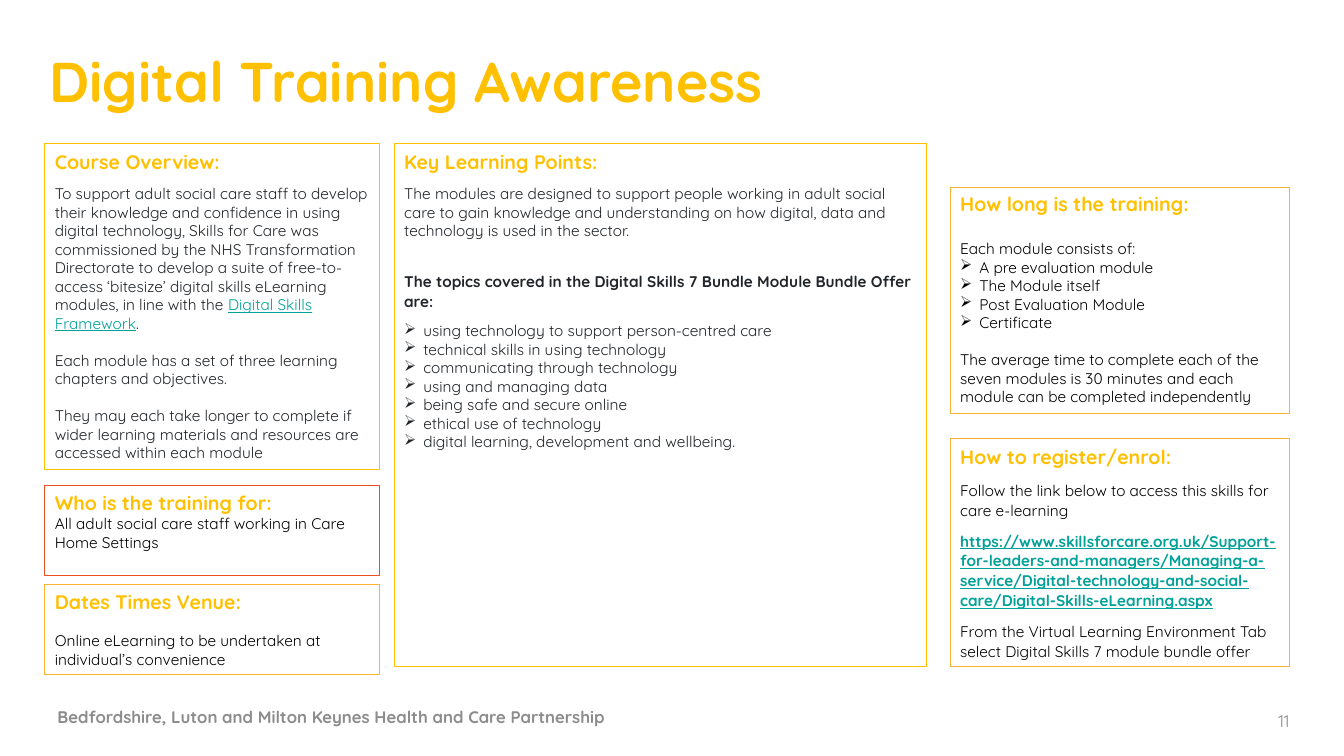
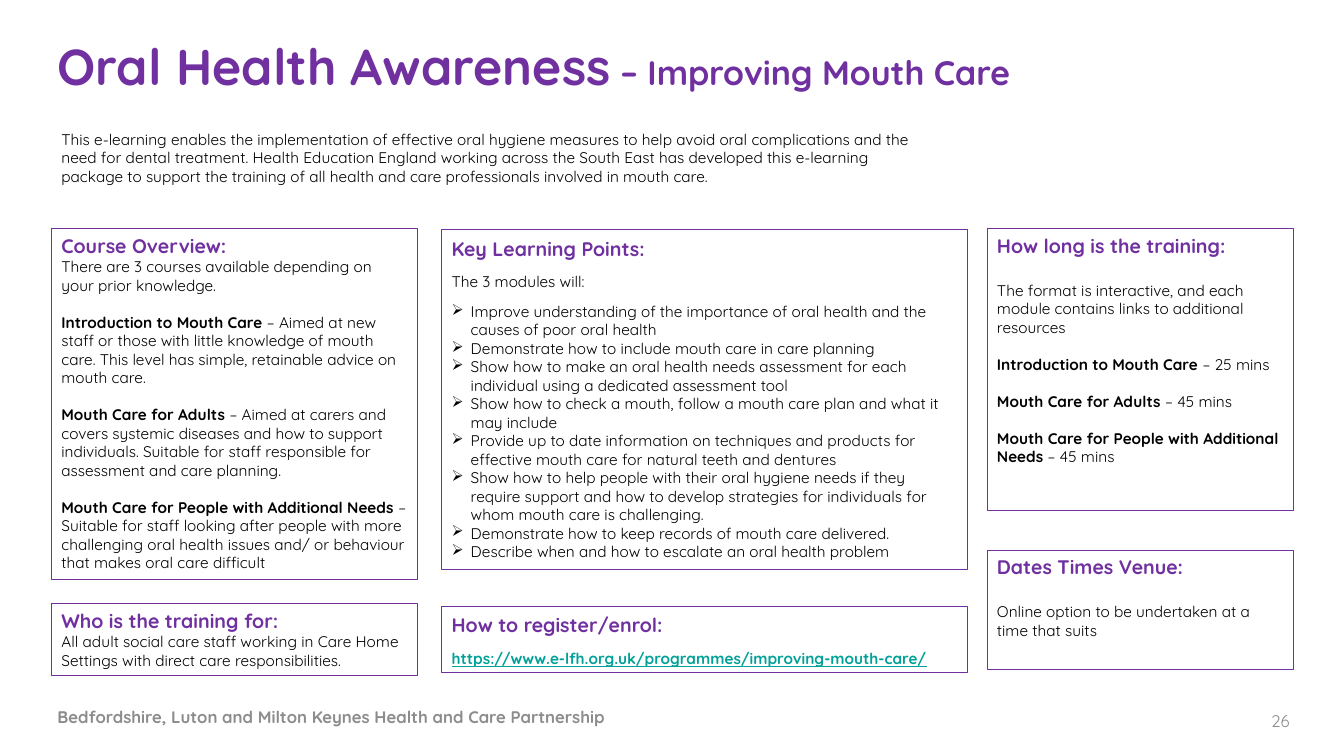
"""Builds two training course slides made of outlined information boxes."""
from dataclasses import dataclass, field
from typing import NamedTuple

from lxml import etree
from pptx import Presentation
from pptx import util as u
from pptx.dml.color import RGBColor
from pptx.enum import shapes, text
from pptx.oxml.ns import qn


@dataclass(frozen=True)
class Theme:
    font: str = "Quicksand"
    yellow: str = "FFC000"
    amber: str = "F9B334"
    red: str = "E8501D"
    purple: str = "7030A0"
    black: str = "000000"
    charcoal: str = "212529"
    teal: str = "00A198"
    grey: str = "8C8C8C"
    heading: float = 14
    body: float = 11
    footer: float = 12
    outline: float = 0.75
    line_spacing: float = 1.07
    space_after: float = 8
    indent: float = 0.19
    body_gap: float = 13.2
    heading_gap: float = 16.8
    section_gap: float = 22


class Place(NamedTuple):
    """Left, top, width and height as percentages of the slide."""
    x: float
    y: float
    w: float
    h: float


class Column(NamedTuple):
    x: float
    w: float

    def rows(self, y: float, h: float) -> Place:
        return Place(self.x, y, self.w, h)


class Run(NamedTuple):
    text: str
    color: str = ""
    bold: bool = False
    underline: bool = False
    size: float = 0


@dataclass(frozen=True)
class Para:
    runs: tuple[Run, ...]
    gap: float = 0
    loose: bool = False
    bullet: bool = False
    align: text.PP_ALIGN = text.PP_ALIGN.LEFT


@dataclass(frozen=True)
class Box:
    place: Place
    heading: str
    paras: list[Para]
    line: str
    loose: bool = False


@dataclass(frozen=True)
class Course:
    accent: str
    title_place: Place
    title: tuple[Run, ...]
    page: str
    boxes: list[Box]
    ink: str = "000000"
    intro: list[tuple[Place, str]] = field(default_factory=list)


T = Theme()
WIDTH, HEIGHT = u.Inches(13.33), u.Inches(7.5)
FOOTER = "Bedfordshire, Luton and Milton Keynes Health and Care Partnership"
FOOTER_PLACE = Place(4.28, 92.13, 60.77, 5.33)
PAGE_PLACE = Place(91.97, 92.67, 3.98, 5.33)


def plain(words: str, gap: float = 0, color: str = T.black, loose: bool = False) -> Para:
    return Para((Run(words, color),), gap, loose)


def bullets(*items: str, color: str = T.black) -> list[Para]:
    return [Para((Run(item, color),), bullet=True) for item in items]


def named(name: str, words: str) -> Para:
    return Para((Run(name + " ", bold=True), Run("– " + words)), T.body_gap)


def link(address: str) -> Para:
    return Para((Run(address, T.teal, True, True),), loose=True)


def emu(place: Place) -> tuple[int, ...]:
    return tuple(int(share * side / 100) for share, side in zip(place, (WIDTH, HEIGHT) * 2))


def add_bullet(p) -> None:
    pPr = p._p.get_or_add_pPr()
    pPr.set("marL", str(u.Inches(T.indent)))
    pPr.set("indent", str(-u.Inches(T.indent)))
    etree.SubElement(pPr, qn("a:buChar")).set("char", "➢")


def write(tf, paras: list[Para]) -> None:
    for i, para in enumerate(paras):
        p = tf.paragraphs[0] if i == 0 else tf.add_paragraph()
        if para.bullet:
            add_bullet(p)
        formats = {"alignment": para.align, "space_before": u.Pt(para.gap)}
        if para.loose:
            formats |= {"line_spacing": T.line_spacing, "space_after": u.Pt(T.space_after)}
        for name, value in formats.items():
            setattr(p, name, value)
        for run in para.runs:
            r = p.add_run()
            r.text = run.text
            formats = {"name": T.font, "size": u.Pt(run.size or T.body),
                       "bold": run.bold, "underline": run.underline}
            for name, value in formats.items():
                setattr(r.font, name, value)
            r.font.color.rgb = RGBColor.from_string(run.color or T.black)


def add_label(s, place: Place, para: Para) -> None:
    tf = s.shapes.add_textbox(*emu(place)).text_frame
    formats = {"word_wrap": True, "vertical_anchor": text.MSO_ANCHOR.MIDDLE,
               **dict.fromkeys(("margin_left", "margin_top", "margin_right", "margin_bottom"), 0)}
    for name, value in formats.items():
        setattr(tf, name, value)
    write(tf, [para])


def add_box(s, box: Box, accent: str) -> None:
    sp = s.shapes.add_shape(shapes.MSO_SHAPE.RECTANGLE, *emu(box.place))
    sp.shadow.inherit = False
    sp.fill.background()
    sp.line.color.rgb = RGBColor.from_string(box.line)
    sp.line.width = u.Pt(T.outline)
    tf = sp.text_frame
    formats = {"word_wrap": True, "vertical_anchor": text.MSO_ANCHOR.TOP,
               "auto_size": text.MSO_AUTO_SIZE.SHAPE_TO_FIT_TEXT}
    for name, value in formats.items():
        setattr(tf, name, value)
    heading = Para((Run(box.heading, accent, True, size=T.heading),), loose=box.loose)
    write(tf, [heading, *box.paras])


def add_course(prs, course: Course) -> None:
    s = prs.slides.add_slide(prs.slide_layouts[6])
    add_label(s, course.title_place, Para(course.title))
    for place, words in course.intro:
        tf = s.shapes.add_textbox(*emu(place)).text_frame
        tf.word_wrap = True
        write(tf, [plain(words)])
    for box in course.boxes:
        add_box(s, box, course.accent)
    add_label(s, FOOTER_PLACE, Para((Run(FOOTER, T.grey, True, size=T.footer),)))
    add_label(s, PAGE_PLACE, Para((Run(course.page, T.grey, size=T.footer),),
                                  align=text.PP_ALIGN.RIGHT))


def digital_course() -> Course:
    left, middle, right = Column(3.34, 24.9), Column(29.33, 39.61), Column(70.7, 25.28)
    ink = T.charcoal
    overview = [
        Para((Run("To support adult social care staff to develop their knowledge and confidence in "
                  "using digital technology, Skills for Care was commissioned by the NHS "
                  "Transformation Directorate to develop a suite of free-to-access ‘bitesize’ "
                  "digital skills eLearning modules, in line with the ", ink),
              Run("Digital Skills Framework", T.teal, underline=True), Run(".", ink))),
        plain("Each module has a set of three learning chapters and objectives.", T.body_gap, ink),
        plain("They may each take longer to complete if wider learning materials and resources "
              "are accessed within each module", T.body_gap, ink)]
    points = [
        plain("The modules are designed to support people working in adult social care to gain "
              "knowledge and understanding on how digital, data and technology is used in the "
              "sector.", color=ink),
        Para((Run("The topics covered in the Digital Skills 7 Bundle Module Bundle Offer are:",
                  ink, True),), T.section_gap, True),
        *bullets("using technology to support person-centred care",
                 "technical skills in using technology", "communicating through technology",
                 "using and managing data", "being safe and secure online",
                 "ethical use of technology", "digital learning, development and wellbeing.",
                 color=ink)]
    length = [
        plain("Each module consists of:", T.heading_gap),
        *bullets("A pre evaluation module", "The Module itself", "Post Evaluation Module",
                 "Certificate"),
        plain("The average time to complete each of the seven modules is 30 minutes and each "
              "module can be completed independently", T.body_gap)]
    register = [
        plain("Follow the link below to access this skills for care e-learning", loose=True),
        link("https://www.skillsforcare.org.uk/Support-for-leaders-and-managers/Managing-a-service/"
             "Digital-technology-and-social-care/Digital-Skills-eLearning.aspx"),
        plain("From the Virtual Learning Environment Tab select Digital Skills 7 module bundle "
              "offer", loose=True)]
    audience = [plain("All adult social care staff working in Care Home Settings")]
    dates = [plain("Online eLearning to be undertaken at individual’s convenience", T.body_gap)]
    return Course(
        T.yellow, Place(3.68, 4.67, 64.07, 11.87),
        (Run("Digital Training Awareness", T.yellow, True, size=40),), "11",
        [Box(left.rows(18.93, 43.2), "Course Overview:", overview, T.yellow, True),
         Box(left.rows(64.27, 11.87), "Who is the training for:", audience, T.red),
         Box(left.rows(77.33, 11.87), "Dates Times Venue:", dates, T.amber),
         Box(middle.rows(18.93, 69.2), "Key Learning Points:", points, T.yellow, True),
         Box(right.rows(24.8, 29.87), "How long is the training:", length, T.amber),
         Box(right.rows(58, 30.13), "How to register/enrol:", register, T.amber, True)])


def oral_course() -> Course:
    left, middle, right = Column(3.83, 27.23), Column(32.86, 39.16), Column(73.44, 22.81)
    line = T.purple
    intro_module, adults_module, needs_module = (
        "Introduction to Mouth Care", "Mouth Care for Adults",
        "Mouth Care for People with Additional Needs")
    overview = [
        plain("There are 3 courses available depending on your prior knowledge."),
        named(intro_module, "Aimed at new staff or those with little knowledge of mouth care. "
              "This level has simple, retainable advice on mouth care."),
        named(adults_module, "Aimed at carers and covers systemic diseases and how to support "
              "individuals. Suitable for staff responsible for assessment and care planning."),
        named(needs_module, "Suitable for staff looking after people with more challenging oral "
              "health issues and/ or behaviour that makes oral care difficult")]
    points = [
        plain("The 3 modules will:", loose=True),
        *bullets(
            "Improve understanding of the importance of oral health and the causes of poor oral "
            "health",
            "Demonstrate how to include mouth care in care planning",
            "Show how to make an oral health needs assessment for each individual using a "
            "dedicated assessment tool",
            "Show how to check a mouth, follow a mouth care plan and what it may include",
            "Provide up to date information on techniques and products for effective mouth care "
            "for natural teeth and dentures",
            "Show how to help people with their oral hygiene needs if they require support and "
            "how to develop strategies for individuals for whom mouth care is challenging.",
            "Demonstrate how to keep records of mouth care delivered.",
            "Describe when and how to escalate an oral health problem")]
    length = [
        plain("The format is interactive, and each module contains links to additional resources",
              T.heading_gap),
        named(intro_module, "25 mins"), named(adults_module, "45 mins"),
        named(needs_module, "45 mins")]
    audience = [plain("All adult social care staff working in Care Home Settings with direct care "
                      "responsibilities.")]
    dates = [plain("Online option to be undertaken at a time that suits", T.heading_gap)]
    register = [link("https://www.e-lfh.org.uk/programmes/improving-mouth-care/")]
    intro = ("This e-learning enables the implementation of effective oral hygiene measures to "
             "help avoid oral complications and the need for dental treatment. Health Education "
             "England working across the South East has developed this e-learning package to "
             "support the training of all health and care professionals involved in mouth care.")
    return Course(
        T.purple, Place(4.28, 2.67, 72.32, 11.87),
        (Run("Oral Health Awareness", T.purple, True, size=36),
         Run(" – Improving Mouth Care", T.purple, True, size=24.3)), "26",
        [Box(left.rows(30.27, 46.4), "Course Overview:", overview, line),
         Box(left.rows(79.87, 9.47), "Who is the training for:", audience, line),
         Box(middle.rows(30.4, 44.93), "Key Learning Points:", points, line, True),
         Box(middle.rows(80.27, 8.67), "How to register/enrol:", register, line, True),
         Box(right.rows(30.27, 37.2), "How long is the training:", length, line),
         Box(right.rows(72.8, 15.73), "Dates Times Venue:", dates, line)],
        intro=[(Place(3.83, 16.53, 65.49, 8.8), intro)])


def main() -> None:
    prs = Presentation()
    prs.slide_width, prs.slide_height = WIDTH, HEIGHT
    for course in (digital_course(), oral_course()):
        add_course(prs, course)
    prs.save("out.pptx")


if __name__ == "__main__":
    main()
